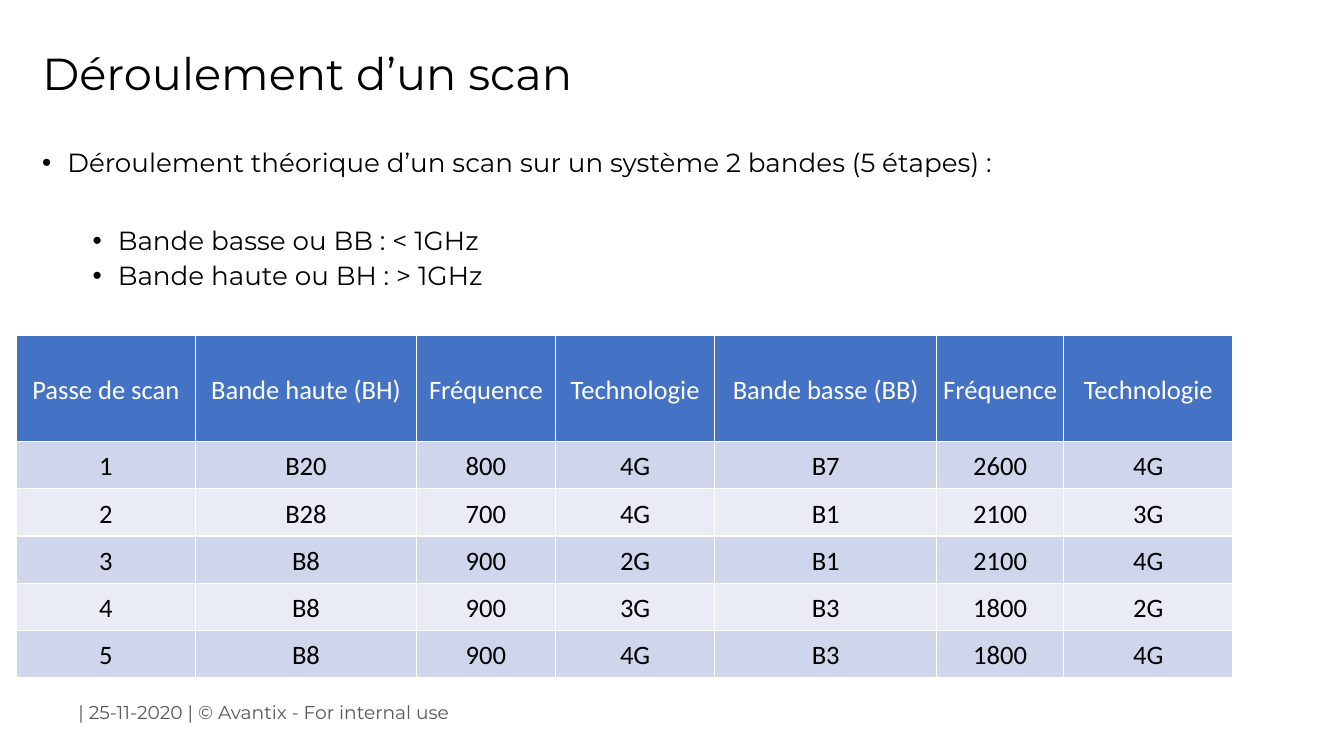
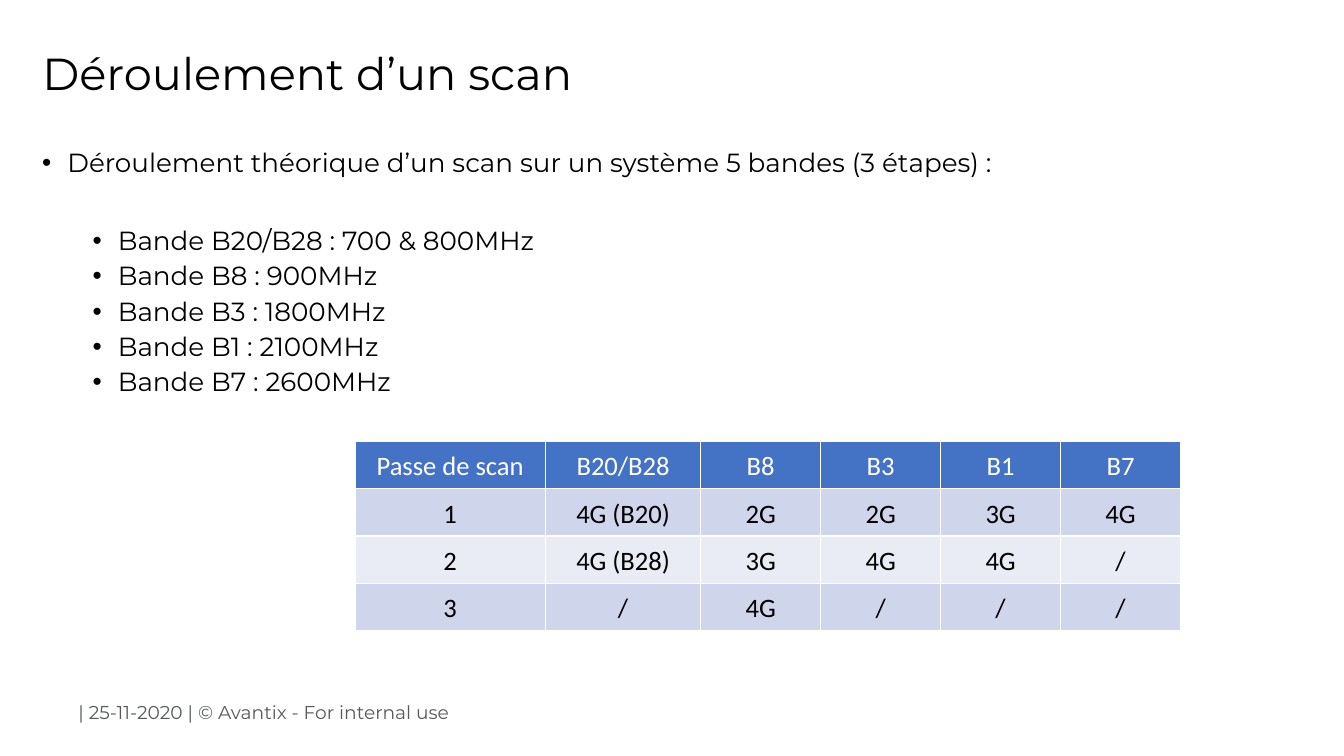
import pptx
import pptx.dml.color
import pptx.enum.text
import pptx.oxml
import pptx.oxml.ns
import pptx.util
from lxml import etree

Inches = pptx.util.Inches
Pt = pptx.util.Pt
RGBColor = pptx.dml.color.RGBColor
ALIGN = pptx.enum.text.PP_ALIGN
ANCHOR = pptx.enum.text.MSO_ANCHOR

BLACK = RGBColor(0x00, 0x00, 0x00)
WHITE = RGBColor(0xFF, 0xFF, 0xFF)
GREY = RGBColor(0x56, 0x5A, 0x5C)
BLUE = RGBColor(0x44, 0x72, 0xC4)
BANDS = (RGBColor(0xCF, 0xD5, 0xEA), RGBColor(0xE9, 0xEB, 0xF5))
TEXT_FONT = "Montserrat"
TABLE_FONT = "Calibri"
ROW_HEIGHT = 0.45

TITLE = "Déroulement d’un scan"
FOOTER = "| 25-11-2020 | © Avantix - For internal use"

SLIDES = [
    {
        "intro": "Déroulement théorique d’un scan sur un système 2 bandes (5 étapes) :",
        "bands": ["Bande basse ou BB : < 1GHz", "Bande haute ou BH : > 1GHz"],
        "table_at": (0.16, 3.33),
        "header_height": 1.05,
        "widths": [1.78, 2.19, 1.38, 1.58, 2.2, 1.26, 1.68],
        "rows": [
            ["Passe de scan", "Bande haute (BH)", "Fréquence", "Technologie",
             "Bande basse (BB)", "Fréquence", "Technologie"],
            ["1", "B20", "800", "4G", "B7", "2600", "4G"],
            ["2", "B28", "700", "4G", "B1", "2100", "3G"],
            ["3", "B8", "900", "2G", "B1", "2100", "4G"],
            ["4", "B8", "900", "3G", "B3", "1800", "2G"],
            ["5", "B8", "900", "4G", "B3", "1800", "4G"],
        ],
    },
    {
        "intro": "Déroulement théorique d’un scan sur un système 5 bandes (3 étapes) :",
        "bands": ["Bande B20/B28 : 700 & 800MHz", "Bande B8 : 900MHz",
                  "Bande B3 : 1800MHz", "Bande B1 : 2100MHz", "Bande B7 : 2600MHz"],
        "table_at": (3.52, 4.38),
        "header_height": ROW_HEIGHT,
        "widths": [1.89, 1.54] + [1.19] * 4,
        "rows": [
            ["Passe de scan", "B20/B28", "B8", "B3", "B1", "B7"],
            ["1", "4G (B20)", "2G", "2G", "3G", "4G"],
            ["2", "4G (B28)", "3G", "4G", "4G", "/"],
            ["3", "/", "4G", "/", "/", "/"],
        ],
    },
]


def write(para, text, size, font=TEXT_FONT, color=BLACK, align=ALIGN.LEFT,
          spacing=1.0, before=0, indent=None):
    para.alignment = align
    para.line_spacing = spacing
    para.space_before = Pt(before)
    if indent is not None:
        properties = para._p.get_or_add_pPr()
        properties.set("marL", str(Inches(indent)))
        properties.set("indent", str(Inches(-0.25)))
        for tag, key, value in (("a:buFont", "typeface", "Arial"), ("a:buChar", "char", "•")):
            etree.SubElement(properties, pptx.oxml.ns.qn(tag)).set(key, value)
    span = para.add_run()
    span.text = text
    span.font.size = Pt(size)
    span.font.name = font
    span.font.bold = False
    span.font.color.rgb = color


def place(shape, left, top, width, height):
    shape.left, shape.top = Inches(left), Inches(top)
    shape.width, shape.height = Inches(width), Inches(height)


def add_title(page):
    title = page.shapes.title
    place(title, 0.32, 0.18, 12.76, 1.15)
    frame = title.text_frame
    frame.auto_size = pptx.enum.text.MSO_AUTO_SIZE.NONE
    frame.vertical_anchor = ANCHOR.MIDDLE
    write(frame.paragraphs[0], TITLE, 32, spacing=0.9)


def add_footer(page):
    box = page.shapes.add_textbox(Inches(0.68), Inches(6.9), Inches(3.94), Inches(0.33))
    box.text_frame.word_wrap = False
    write(box.text_frame.paragraphs[0], FOOTER, 13.3, color=GREY)


def add_bullets(page, intro, bands):
    box = page.shapes.add_textbox(Inches(0.32), Inches(1.44), Inches(12.44), Inches(5.67))
    frame = box.text_frame
    frame.word_wrap = True
    write(frame.paragraphs[0], intro, 18.7, spacing=0.9, indent=0.25)
    for index, band in enumerate(bands):
        write(frame.add_paragraph(), band, 18.7, spacing=0.9,
              before=5 if index else 35.5, indent=0.75)


def add_borders(cell):
    properties = cell._tc.get_or_add_tcPr()
    for side in ("lnL", "lnR", "lnT", "lnB"):
        properties.append(pptx.oxml.parse_xml(
            f'<a:{side} {pptx.oxml.ns.nsdecls("a")} w="{Pt(1)}">'
            f'<a:solidFill><a:srgbClr val="{WHITE}"/></a:solidFill></a:{side}>'))


def add_scan_table(page, content):
    rows, widths = content["rows"], content["widths"]
    heights = [content["header_height"]] + [ROW_HEIGHT] * (len(rows) - 1)
    left, top = content["table_at"]
    table = page.shapes.add_table(len(rows), len(widths), Inches(left), Inches(top),
                                  Inches(sum(widths)), Inches(sum(heights))).table
    for column, width in zip(table.columns, widths):
        column.width = Inches(width)
    for r, (row, height) in enumerate(zip(rows, heights)):
        table.rows[r].height = Inches(height)
        for c, text in enumerate(row):
            cell = table.cell(r, c)
            add_borders(cell)
            cell.fill.solid()
            cell.fill.fore_color.rgb = BANDS[(r - 1) % 2] if r else BLUE
            cell.vertical_anchor = ANCHOR.MIDDLE
            cell.margin_left = cell.margin_right = Inches(0)
            cell.margin_top, cell.margin_bottom = Inches(0.07), Inches(0.06)
            write(cell.text_frame.paragraphs[0], text, 19, font=TABLE_FONT,
                  color=BLACK if r else WHITE, align=ALIGN.CENTER, spacing=1.07)


def main():
    deck = pptx.Presentation()
    deck.slide_width, deck.slide_height = Inches(13.33), Inches(7.5)
    for content in SLIDES:
        page = deck.slides.add_slide(deck.slide_layouts[5])
        add_footer(page)
        add_bullets(page, content["intro"], content["bands"])
        add_title(page)
        add_scan_table(page, content)
    deck.save("out.pptx")


if __name__ == "__main__":
    main()
